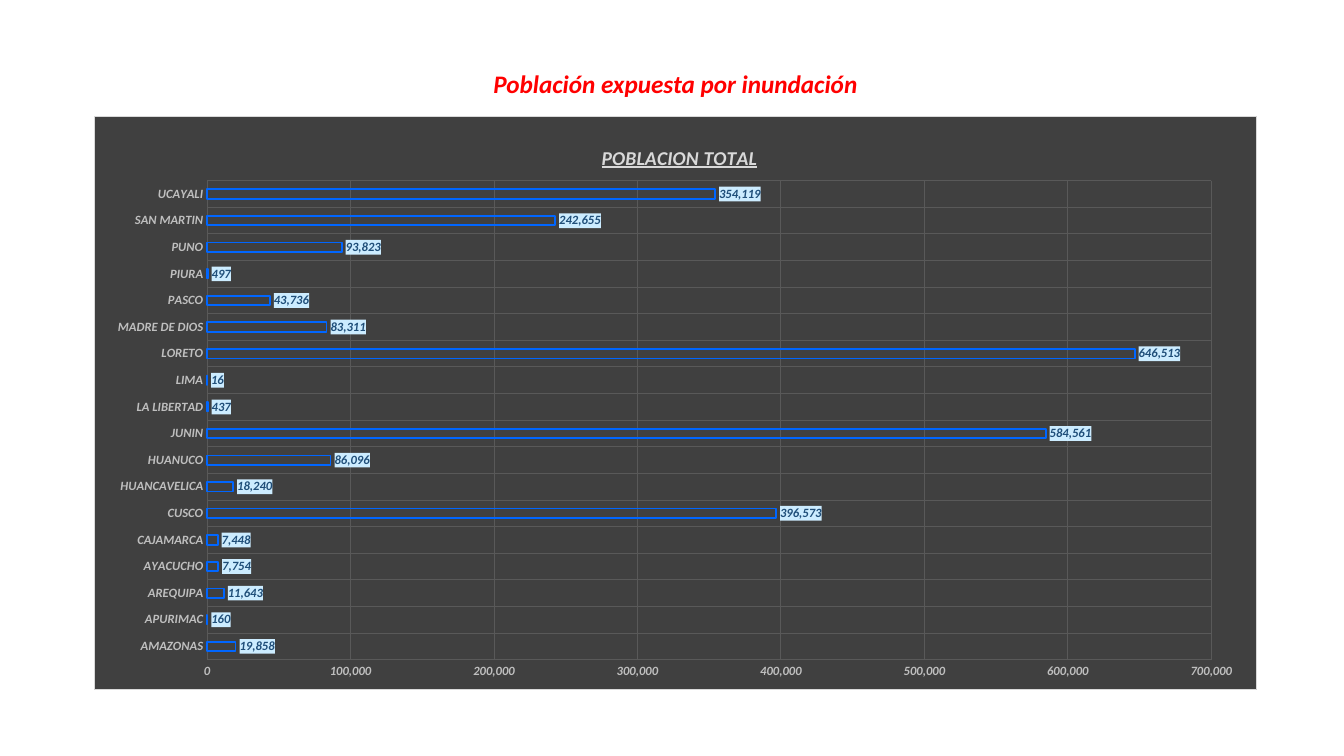
from lxml import etree
from pptx import Presentation
from pptx.chart.data import CategoryChartData
from pptx.dml.color import RGBColor
from pptx.enum.chart import XL_CHART_TYPE, XL_LABEL_POSITION, XL_TICK_MARK
from pptx.enum.text import MSO_ANCHOR, PP_ALIGN
from pptx.oxml import parse_xml
from pptx.oxml.ns import nsdecls, qn
from pptx.util import Inches, Pt

RED = RGBColor(0xFF, 0x00, 0x00)
CHARCOAL = RGBColor(0x40, 0x40, 0x40)
GRID_GRAY = RGBColor(0x59, 0x59, 0x59)
AXIS_GRAY = RGBColor(0xBF, 0xBF, 0xBF)
LIGHT_GRAY = RGBColor(0xD9, 0xD9, 0xD9)
BAR_BLUE = RGBColor(0x00, 0x66, 0xFF)
LABEL_BLUE = RGBColor(0x1F, 0x4E, 0x79)
LABEL_FILL = RGBColor(0xCC, 0xEC, 0xFF)

CHART_WIDTH = 11.54
CHART_HEIGHT = 5.7

POPULATION = {
    "AMAZONAS": 19858,
    "APURIMAC": 160,
    "AREQUIPA": 11643,
    "AYACUCHO": 7754,
    "CAJAMARCA": 7448,
    "CUSCO": 396573,
    "HUANCAVELICA": 18240,
    "HUANUCO": 86096,
    "JUNIN": 584561,
    "LA LIBERTAD": 437,
    "LIMA": 16,
    "LORETO": 646513,
    "MADRE DE DIOS": 83311,
    "PASCO": 43736,
    "PIURA": 497,
    "PUNO": 93823,
    "SAN MARTIN": 242655,
    "UCAYALI": 354119,
}


def format_font(font, size, color, underline=None):
    font.name = "Calibri"
    font.size = Pt(size)
    font.bold = font.italic = True
    font.underline = underline
    font.color.rgb = color


def write_text(paragraph, text, **font_format):
    run = paragraph.add_run()
    run.text = text
    format_font(run.font, **font_format)


def chart_fill(fill, border=None):
    """Return the c:spPr of a chart part with a solid fill and optional border."""
    line = "<a:ln><a:noFill/></a:ln>"
    if border is not None:
        line = (f'<a:ln w="{Pt(0.75)}"><a:solidFill><a:srgbClr val="{border}"/>'
                "</a:solidFill></a:ln>")
    return parse_xml(
        f'<c:spPr {nsdecls("c", "a")}><a:solidFill><a:srgbClr val="{fill}"/>'
        f"</a:solidFill>{line}</c:spPr>")


def place_chart_part(element, index, left, top, size=None):
    """Fix a chart part's place, in inches from the chart's corner."""
    for old_layout in element.findall(qn("c:layout")):
        element.remove(old_layout)
    settings = {"layoutTarget": "inner"} if size else {}
    settings.update(xMode="edge", yMode="edge",
                    x=left / CHART_WIDTH, y=top / CHART_HEIGHT)
    if size:
        settings.update(w=size[0] / CHART_WIDTH, h=size[1] / CHART_HEIGHT)
    layout = parse_xml(f'<c:layout {nsdecls("c")}><c:manualLayout/></c:layout>')
    for name, value in settings.items():
        etree.SubElement(layout[0], qn(f"c:{name}")).set("val", str(value))
    element.insert(index, layout)


class SlideBuilder:
    def __init__(self, slide):
        self.slide = slide

    def heading(self, text, left, top, width, height):
        shape = self.slide.shapes.add_textbox(
            Inches(left), Inches(top), Inches(width), Inches(height))
        frame = shape.text_frame
        frame.word_wrap = False
        frame.vertical_anchor = MSO_ANCHOR.TOP
        paragraph = frame.paragraphs[0]
        paragraph.alignment = PP_ALIGN.CENTER
        write_text(paragraph, text, size=18, color=RED)

    def bar_chart(self, title, values, left, top):
        data = CategoryChartData(number_format="#,##0")
        data.categories = list(values)
        data.add_series("Series 1", list(values.values()))
        chart = self.slide.shapes.add_chart(
            XL_CHART_TYPE.BAR_CLUSTERED, Inches(left), Inches(top),
            Inches(CHART_WIDTH), Inches(CHART_HEIGHT), data).chart
        chart.has_legend = False
        chart.font.name = "Calibri"
        chart.font.size = Pt(10)
        chart.has_title = True
        write_text(chart.chart_title.text_frame.paragraphs[0], title,
                   size=14, color=LIGHT_GRAY, underline=True)

        for axis in (chart.category_axis, chart.value_axis):
            self.style_axis(axis)
        chart.value_axis.minimum_scale = 0
        chart.value_axis.maximum_scale = 700000
        chart.value_axis.major_unit = 100000
        chart.value_axis.tick_labels.number_format = "#,##0"
        chart.value_axis.tick_labels.number_format_is_linked = False

        self.style_bars(chart.plots[0])
        chart_element = chart.element.find(qn("c:chart"))
        label_text = next(chart_element.iter(qn("c:dLbls"))).find(qn("c:txPr"))
        label_text.addprevious(chart_fill(LABEL_FILL))
        chart_element.addnext(chart_fill(CHARCOAL, LIGHT_GRAY))
        place_chart_part(chart_element.find(qn("c:title")), 1, 5, 0.24)
        place_chart_part(chart_element.find(qn("c:plotArea")), 0, 1.12, 0.64,
                         size=(9.97, 4.76))

    def style_axis(self, axis):
        axis.major_tick_mark = axis.minor_tick_mark = XL_TICK_MARK.NONE
        axis.format.line.fill.background()
        axis.has_major_gridlines = True
        grid_line = axis.major_gridlines.format.line
        grid_line.color.rgb = GRID_GRAY
        grid_line.width = Pt(0.75)
        format_font(axis.tick_labels.font, size=9, color=AXIS_GRAY)

    def style_bars(self, plot):
        plot.vary_by_categories = False
        plot.gap_width = 182
        plot.overlap = -50
        series = plot.series[0]
        series.format.fill.background()
        series.format.line.color.rgb = BAR_BLUE
        series.format.line.width = Pt(1.25)
        labels = series.data_labels
        labels.show_value = True
        labels.position = XL_LABEL_POSITION.OUTSIDE_END
        labels.number_format = "#,##0"
        labels.number_format_is_linked = False
        format_font(labels.font, size=9, color=LABEL_BLUE)


def main():
    presentation = Presentation()
    presentation.slide_width = Inches(13.33)
    presentation.slide_height = Inches(7.5)
    slide = presentation.slides.add_slide(presentation.slide_layouts[6])
    builder = SlideBuilder(slide)
    builder.heading("Población expuesta por inundación", 4.77, 0.63, 3.86, 0.4)
    builder.bar_chart("POBLACION TOTAL", POPULATION, 0.93, 1.15)
    presentation.save("out.pptx")


if __name__ == "__main__":
    main()
